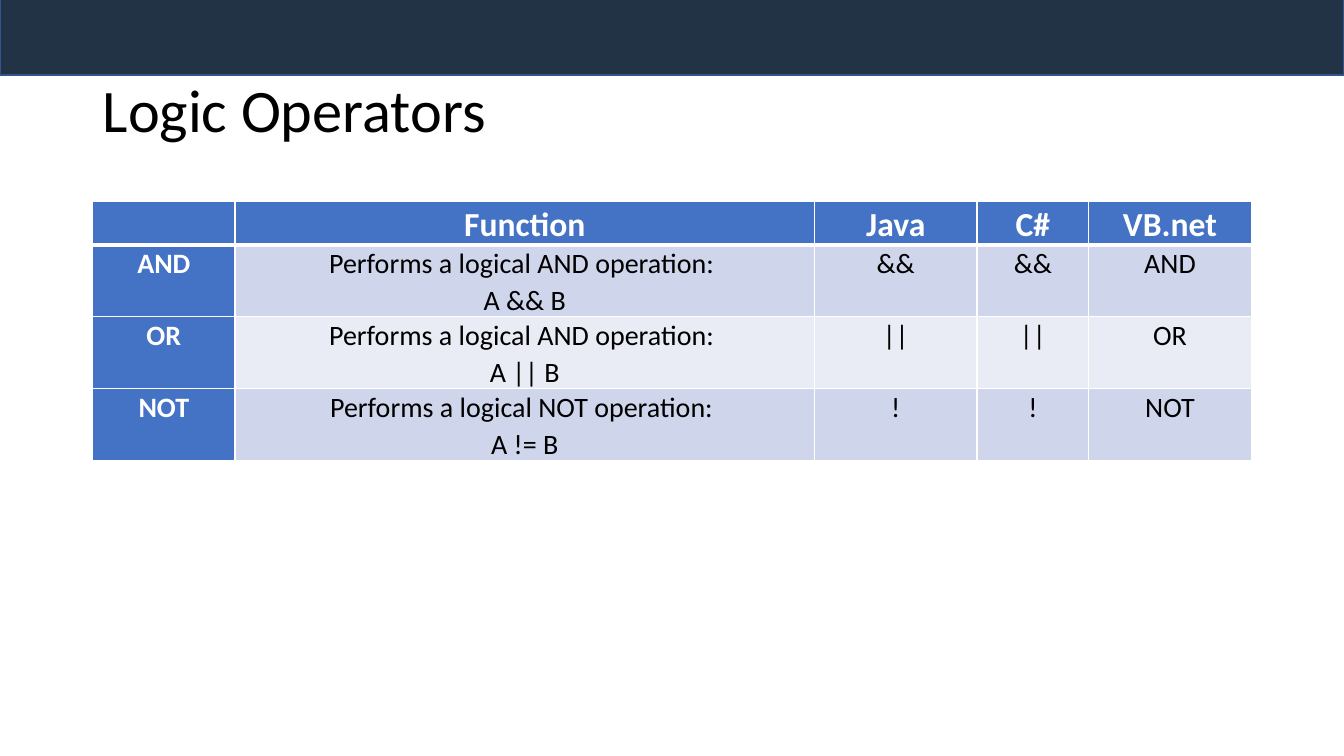
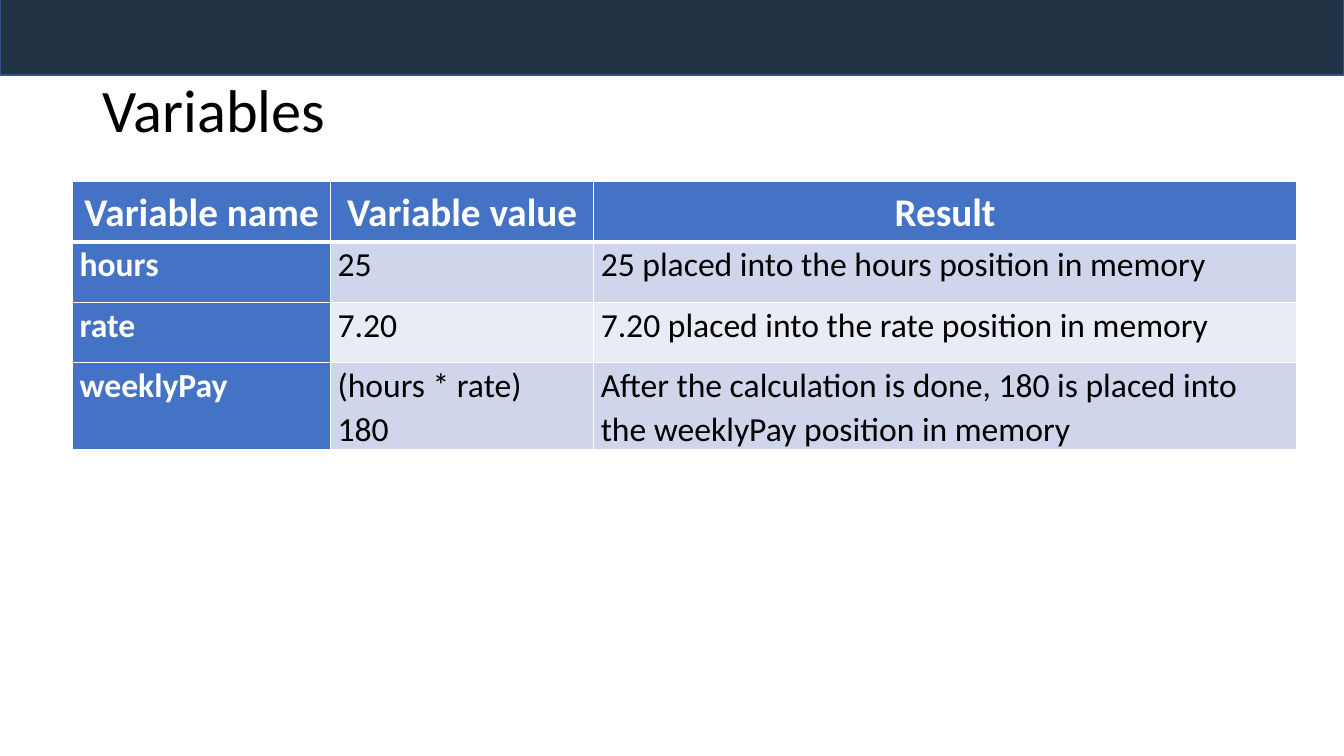
from lxml.etree import SubElement
from pptx import Presentation
from pptx.dml.color import RGBColor
from pptx.enum.shapes import MSO_SHAPE
from pptx.enum.text import MSO_ANCHOR, PP_ALIGN
from pptx.oxml.ns import qn
from pptx.util import Emu, Inches, Pt

FONT = "Calibri"
WHITE = RGBColor(0xFF, 0xFF, 0xFF)
BLACK = RGBColor(0x00, 0x00, 0x00)
NAVY = RGBColor(0x22, 0x33, 0x46)
BAND_EDGE = RGBColor(0x32, 0x54, 0x91)
HEADER_BLUE = RGBColor(0x44, 0x72, 0xC4)
ROW_SHADES = (RGBColor(0xCF, 0xD5, 0xEA), RGBColor(0xE9, 0xEB, 0xF5))
GRID = 100  # columns and rows on a slide


def write_text(frame, text, size=20, color=BLACK, bold=False,
               align=PP_ALIGN.LEFT, spacing=1.07):
    """Fill a text frame, one paragraph for each line of the text."""
    for index, line in enumerate(text.split("\n")):
        para = frame.add_paragraph() if index else frame.paragraphs[0]
        para.alignment = align
        para.line_spacing = spacing
        span = para.add_run()
        span.text = line
        span.font.name = FONT
        span.font.size = Pt(size)
        span.font.bold = bold
        span.font.color.rgb = color


def draw_borders(cell, **widths):
    """Draw white cell borders; widths are points keyed by L, R, T and B."""
    properties = cell._tc.get_or_add_tcPr()
    for side in "LRTB":
        line = SubElement(properties, qn(f"a:ln{side}"), w=str(Pt(widths.get(side, 1))))
        fill = SubElement(line, qn("a:solidFill"))
        SubElement(fill, qn("a:srgbClr"), val=str(WHITE))


class LessonDeck:
    def __init__(self):
        self.deck = Presentation()
        self.deck.slide_width = Inches(13.333)
        self.deck.slide_height = Inches(7.5)
        self.page = None

    def across(self, columns):
        return Emu(round(self.deck.slide_width * columns / GRID))

    def down(self, rows):
        return Emu(round(self.deck.slide_height * rows / GRID))

    def area(self, left, top, width, height):
        return self.across(left), self.down(top), self.across(width), self.down(height)

    def add_page(self, title):
        self.page = self.deck.slides.add_slide(self.deck.slide_layouts[6])
        self.add_band()
        self.add_title(title)

    def add_band(self):
        band = self.page.shapes.add_shape(MSO_SHAPE.RECTANGLE, *self.area(0, -0.5, GRID, 10.4))
        band.shadow.inherit = False
        band.fill.solid()
        band.fill.fore_color.rgb = NAVY
        band.line.color.rgb = BAND_EDGE
        band.line.width = Pt(1)

    def add_title(self, title):
        box = self.page.shapes.add_textbox(*self.area(6.9, 5.33, 86.25, 19.33))
        box.text_frame.word_wrap = True
        box.text_frame.vertical_anchor = MSO_ANCHOR.MIDDLE
        write_text(box.text_frame, title, size=43.1, spacing=0.9)

    def add_table(self, cells, left, top, widths, heights, header_size, body_size,
                  inset=0.1, body_align=PP_ALIGN.LEFT, header_anchor=MSO_ANCHOR.TOP):
        """Add a table with a header row, a header column and banded rows."""
        place = self.area(left, top, sum(widths), sum(heights))
        table = self.page.shapes.add_table(len(heights), len(widths), *place).table
        for column, width in zip(table.columns, widths):
            column.width = self.across(width)
        for row, height in zip(table.rows, heights):
            row.height = self.down(height)
        for row_index, texts in enumerate(cells):
            for column_index, text in enumerate(texts):
                cell = table.cell(row_index, column_index)
                in_header_row = row_index == 0
                is_header = in_header_row or column_index == 0
                cell.margin_left = cell.margin_right = Inches(inset)
                cell.margin_top = cell.margin_bottom = 0
                cell.vertical_anchor = header_anchor if in_header_row else MSO_ANCHOR.TOP
                draw_borders(cell, B=3 if in_header_row else 1, T=3 if row_index == 1 else 1)
                cell.fill.solid()
                cell.fill.fore_color.rgb = (
                    HEADER_BLUE if is_header else ROW_SHADES[(row_index - 1) % 2])
                if text:
                    write_text(cell.text_frame, text, bold=is_header,
                               size=header_size if in_header_row else body_size,
                               color=WHITE if is_header else BLACK,
                               align=PP_ALIGN.CENTER if in_header_row else body_align)


def main():
    lesson = LessonDeck()

    lesson.add_page("Logic Operators")
    lesson.add_table(
        [("", "Function", "Java", "C#", "VB.net"),
         ("AND", "Performs a logical AND operation: \nA && B", "&&", "&&", "AND"),
         ("OR", "Performs a logical AND operation: \nA || B", "||", "||", "OR"),
         ("NOT", "Performs a logical NOT operation: \nA != B", "!", "!", "NOT")],
        left=6.9, top=26.67, widths=(10.58, 43.13, 12.08, 8.33, 12.08),
        heights=(5.33, 9.47, 9.47, 9.47), header_size=24, body_size=20,
        body_align=PP_ALIGN.CENTER)

    lesson.add_page("Variables")
    lesson.add_table(
        [("Variable name", "Variable value", "Result"),
         ("hours", "25", "25 placed into the hours position in memory"),
         ("rate", "7.20", "7.20 placed into the rate position in memory"),
         ("weeklyPay", "(hours * rate)\n180",
          "After the calculation is done, 180 is placed into "
          "the weeklyPay position in memory")],
        left=5.4, top=24, widths=(19.2, 19.58, 52.28), heights=(8, 8, 8, 8.8),
        header_size=28, body_size=24, inset=0.07, header_anchor=MSO_ANCHOR.MIDDLE)

    lesson.deck.save("out.pptx")


if __name__ == "__main__":
    main()
